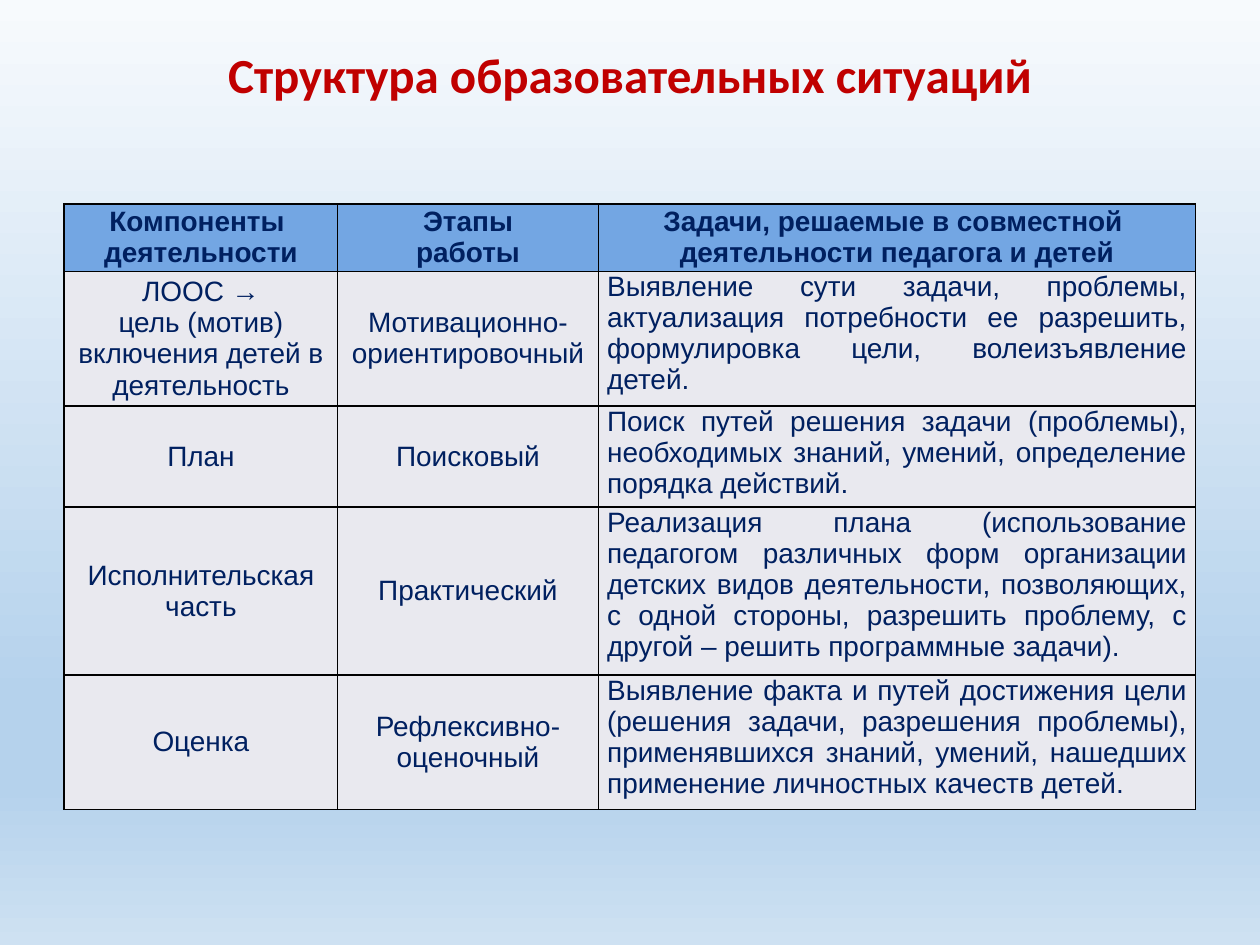
import pptx
import pptx.util
import pptx.dml.color
import pptx.enum.text
import pptx.oxml
import pptx.oxml.ns
import lxml.etree

Inches = pptx.util.Inches
Pt = pptx.util.Pt
ALIGN = pptx.enum.text.PP_ALIGN
ANCHOR = pptx.enum.text.MSO_ANCHOR
qn = pptx.oxml.ns.qn

COLORS = {
    "title": "C00000",
    "text": "002060",
    "header": "73A6E3",
    "body": "E9E9EF",
    "border": "000000",
}
SKY_STOPS = [(0, "F7FAFD"), (74, "B5D2EC"), (83, "B5D2EC"), (100, "CEE1F2")]


def write_text(frame, text, size=16, font="Arial", color="text", bold=False,
               align=ALIGN.CENTER, line_spacing=None, space_before=None):
    frame.word_wrap = True
    for index, line in enumerate(text.split("\n")):
        paragraph = frame.add_paragraph() if index else frame.paragraphs[0]
        paragraph.alignment = align
        paragraph.line_spacing = line_spacing
        paragraph.space_before = space_before
        run = paragraph.add_run()
        run.text = line
        run.font.size = Pt(size)
        run.font.name = font
        run.font.bold = bold
        run.font.color.rgb = pptx.dml.color.RGBColor.from_string(COLORS[color])


def style_cell(cell, fill):
    properties = cell._tc.get_or_add_tcPr()
    for side in ("lnL", "lnR", "lnT", "lnB"):
        border = lxml.etree.SubElement(properties, qn(f"a:{side}"), w=str(Pt(1)))
        solid = lxml.etree.SubElement(border, qn("a:solidFill"))
        lxml.etree.SubElement(solid, qn("a:srgbClr"), val=COLORS["border"])
    cell.fill.solid()
    cell.fill.fore_color.rgb = pptx.dml.color.RGBColor.from_string(COLORS[fill])
    cell.margin_left = cell.margin_right = Inches(0.07)
    cell.margin_top = cell.margin_bottom = 0


presentation = pptx.Presentation()
presentation.slide_width = Inches(10)
presentation.slide_height = Inches(7.5)
slide = presentation.slides.add_slide(presentation.slide_layouts[6])

sky = slide.background.fill
sky.gradient()
sky.gradient_angle = 270
stop_list = next(slide.element.iter(qn("a:gsLst")))
for old_stop in list(stop_list):
    stop_list.remove(old_stop)
for percent, color in SKY_STOPS:
    stop = lxml.etree.SubElement(stop_list, qn("a:gs"), pos=str(percent * 1000))
    lxml.etree.SubElement(stop, qn("a:srgbClr"), val=color)

title = slide.shapes.add_textbox(Inches(0.5), Inches(0.36), Inches(9), Inches(0.71))
write_text(title.text_frame, "Структура образовательных ситуаций", size=28,
           font="Calibri", color="title", bold=True, line_spacing=0.9,
           space_before=Pt(7.5))

stages = [
    ("Компоненты \nдеятельности", "Этапы\nработы",
     "Задачи, решаемые в совместной \nдеятельности педагога и детей"),
    ("ЛООС →\nцель (мотив)\nвключения детей в деятельность",
     "Мотивационно-ориентировочный",
     "Выявление сути задачи, проблемы, актуализация потребности ее разрешить, "
     "формулировка цели, волеизъявление детей."),
    ("План", "Поисковый",
     "Поиск путей решения задачи (проблемы), необходимых знаний, умений, "
     "определение порядка действий."),
    ("Исполнительская\nчасть", "Практический",
     "Реализация плана (использование педагогом различных форм организации "
     "детских видов деятельности, позволяющих, с одной стороны, разрешить "
     "проблему, с другой – решить программные задачи)."),
    ("Оценка", "Рефлексивно-оценочный",
     "Выявление факта и путей достижения цели (решения задачи, разрешения "
     "проблемы), применявшихся знаний, умений, нашедших применение личностных "
     "качеств детей."),
]
column_widths = [2.17, 2.07, 4.74]
row_heights = [0.53, 1.07, 0.8, 1.33, 1.07]

structure = slide.shapes.add_table(
    len(row_heights), len(column_widths), Inches(0.51), Inches(1.62),
    Inches(sum(column_widths)), Inches(sum(row_heights))).table
for column, width in zip(structure.columns, column_widths):
    column.width = Inches(width)
for row, height in zip(structure.rows, row_heights):
    row.height = Inches(height)

for row_index, stage in enumerate(stages):
    is_header = row_index == 0
    for column_index, text in enumerate(stage):
        cell = structure.cell(row_index, column_index)
        is_task = column_index == 2 and not is_header
        style_cell(cell, "header" if is_header else "body")
        cell.vertical_anchor = ANCHOR.TOP if is_task else ANCHOR.MIDDLE
        write_text(cell.text_frame, text, bold=is_header,
                   align=ALIGN.JUSTIFY if is_task else ALIGN.CENTER)

presentation.save("out.pptx")
